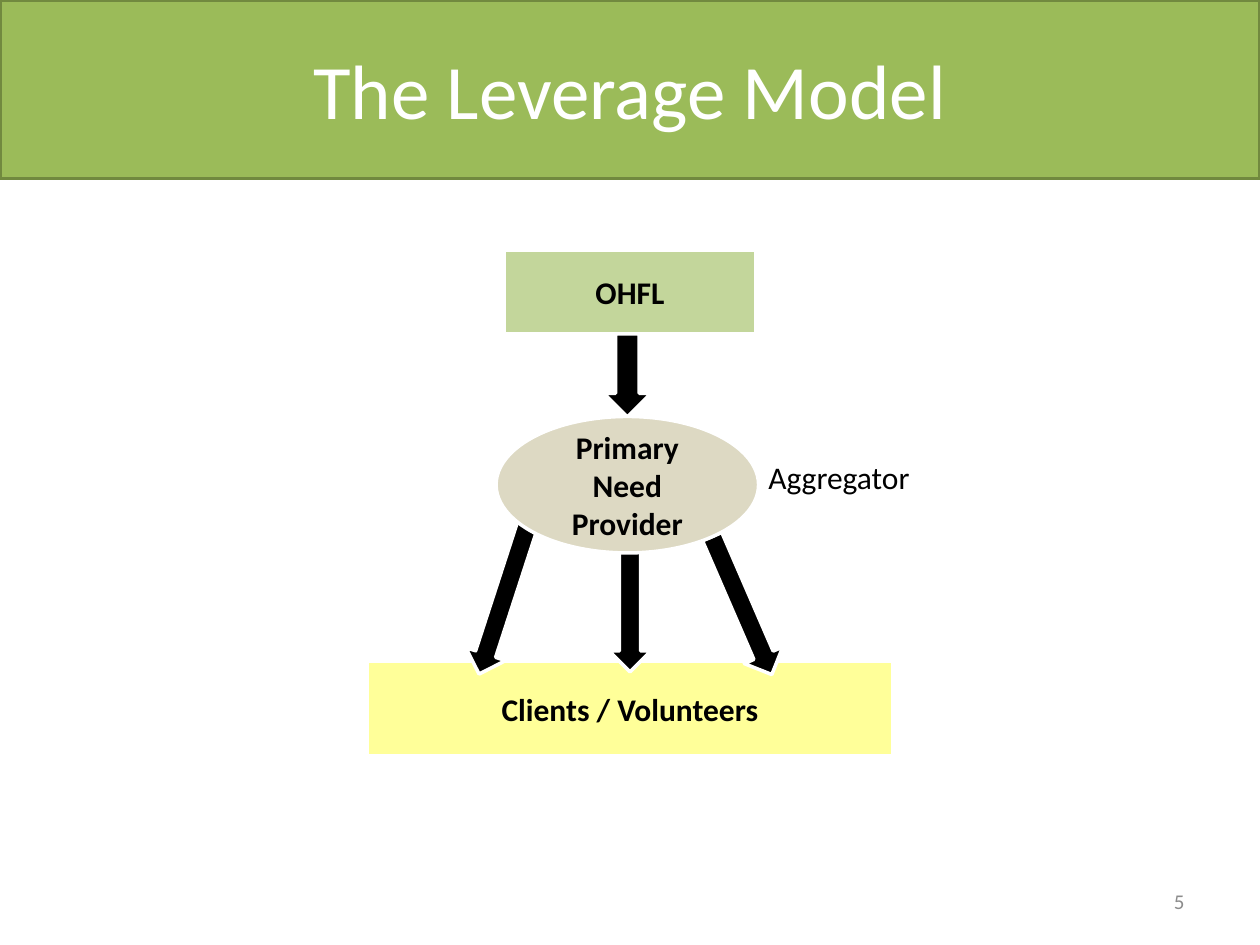
from pptx import Presentation
from pptx.dml.color import RGBColor
from pptx.enum.shapes import MSO_SHAPE as Shape
from pptx.enum.text import MSO_ANCHOR as Anchor, PP_ALIGN as Align
from pptx.util import Pt

COLORS = {
    "banner": "9BBB59", "banner_edge": "71893F", "funder": "C3D69B",
    "clients": "FFFF99", "provider": "DDD9C3", "white": "FFFFFF",
    "black": "000000", "page": "8C8C8C",
}


def write(shape, text, size, color, align, bold=False):
    frame = shape.text_frame
    frame.word_wrap = True
    frame.vertical_anchor = Anchor.MIDDLE
    paragraph = frame.paragraphs[0]
    paragraph.text = text
    paragraph.alignment = align
    font = paragraph.font
    font.name = "Calibri"
    font.size = Pt(size)
    font.bold = bold
    font.color.rgb = RGBColor.from_string(COLORS[color])


def draw(kind, box, fill, edge="white"):
    shape = slide.shapes.add_shape(kind, *map(Pt, box))
    shape.shadow.inherit = False
    shape.fill.solid()
    shape.fill.fore_color.rgb = RGBColor.from_string(COLORS[fill])
    shape.line.color.rgb = RGBColor.from_string(COLORS[edge])
    shape.line.width = Pt(2)
    return shape


prs = Presentation()
prs.slide_width, prs.slide_height = Pt(720), Pt(540)
slide = prs.slides.add_slide(prs.slide_layouts[6])

banner = draw(Shape.RECTANGLE, (0, 0, 720, 102), "banner", "banner_edge")
write(banner, "The Leverage Model", 44, "white", Align.CENTER)

page_number = slide.shapes.add_textbox(Pt(516), Pt(500.5), Pt(168), Pt(28.75))
write(page_number, "5", 12, "page", Align.RIGHT)

for box, fill, label in [
    ((288, 142.8, 144, 48), "funder", "OHFL"),
    ((210, 378, 300, 54), "clients", "Clients / Volunteers"),
]:
    write(draw(Shape.RECTANGLE, box, fill), label, 18, "black", Align.CENTER, True)

for box, angle in [
    ((345, 190.8, 27, 47.5), 0),
    ((275.7, 297.4, 24, 90), 18),
    ((348, 312, 24, 72), 0),
    ((412, 303, 24, 86), 336.6),
]:
    draw(Shape.DOWN_ARROW, box, "black").rotation = angle

provider = draw(Shape.OVAL, (283.5, 238, 150, 78), "provider")
write(provider, "Primary Need Provider", 18, "black", Align.CENTER, True)

role = slide.shapes.add_textbox(Pt(432), Pt(258), Pt(96), Pt(29))
write(role, "Aggregator", 18, "black", Align.LEFT)
role.text_frame.word_wrap = False

prs.save("out.pptx")
